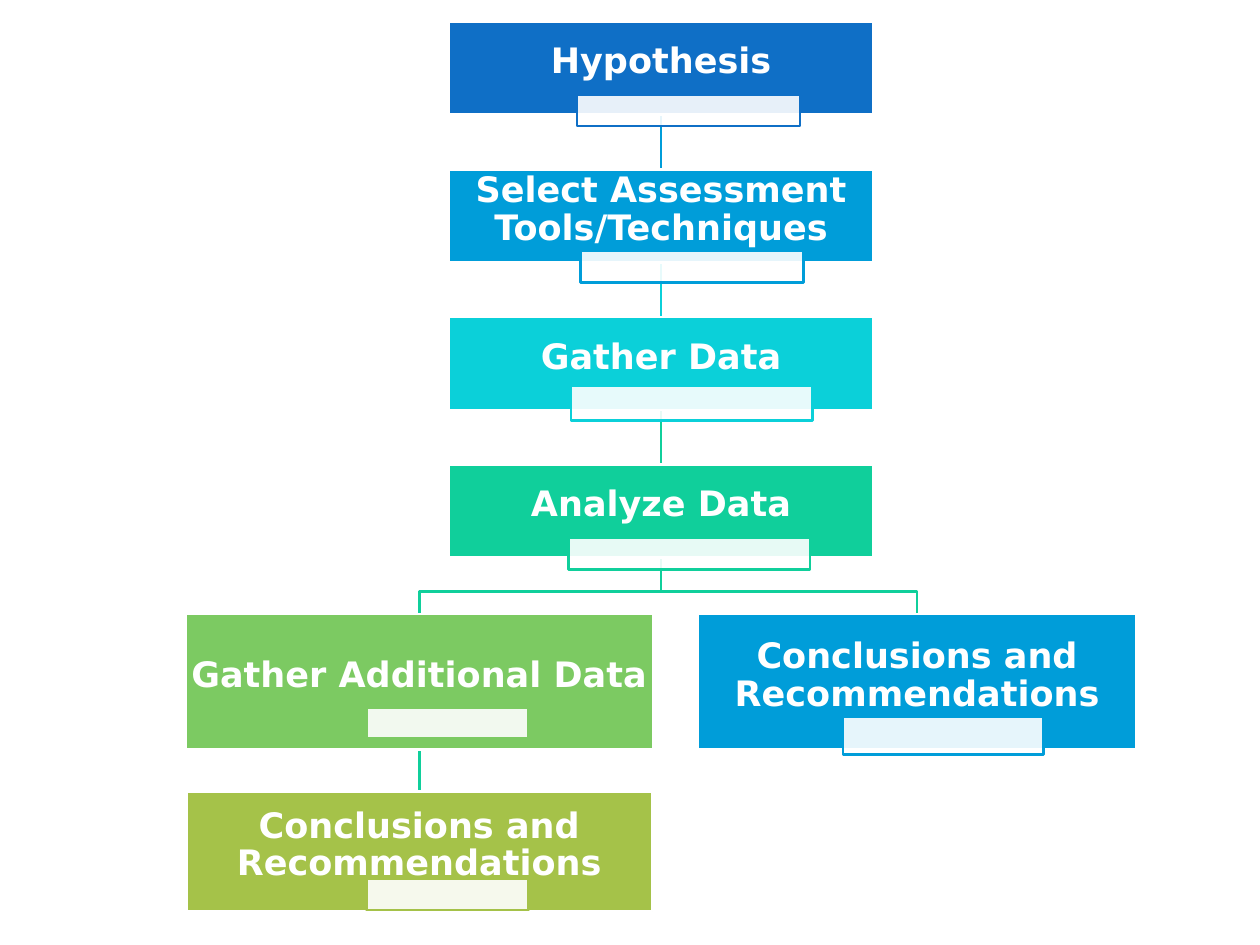
from dataclasses import dataclass

from lxml.etree import SubElement
from pptx import Presentation
from pptx.dml.color import RGBColor
from pptx.enum.shapes import MSO_CONNECTOR as Connector, MSO_SHAPE as Preset
from pptx.enum.text import MSO_ANCHOR as Anchor, PP_ALIGN as Align
from pptx.oxml.ns import qn
from pptx.util import Pt


@dataclass(frozen=True)
class Theme:
    white: str = "FFFFFF"
    blue: str = "0F6FC6"
    sky: str = "009DD9"
    cyan: str = "0BD0D9"
    teal: str = "10CF9B"
    green: str = "7CCA62"
    olive: str = "A5C249"
    font: str = "DejaVu Sans"
    size: float = 20
    stroke: float = 1.5
    tag_opacity: int = 90


@dataclass(frozen=True)
class Box:
    left: float
    top: float
    width: float
    height: float

    @property
    def middle(self):
        return self.left + self.width / 2

    @property
    def bottom(self):
        return self.top + self.height

    def inner(self, left, top, width, height):
        return Box(self.left + left, self.top + top, width, height)


@dataclass(frozen=True)
class Step:
    text: str
    color: str
    box: Box
    tag: tuple


THEME = Theme()
COLUMN_LEFT, COLUMN_TOP, COLUMN_PITCH = 256.4, 12.3, 84.4
COLUMN_WIDTH, COLUMN_HEIGHT = 242.8, 53.2
BRANCH_TOP, BRANCH_HEIGHT = 350.8, 77.6
FORK_DROP = 19.5

COLUMN = [
    ("Hypothesis", THEME.blue, (73.4, 41.8, 127.4, 18)),
    ("Select Assessment Tools/Techniques", THEME.sky, (75.4, 46.7, 127.4, 18)),
    ("Gather Data", THEME.cyan, (69.8, 39.4, 138.2, 20)),
    ("Analyze Data", THEME.teal, (68.3, 41.8, 138.2, 18)),
]
CONCLUSIONS = "Conclusions and Recommendations"
MORE_DATA = Step("Gather Additional Data", THEME.green,
                 Box(106, BRANCH_TOP, 267.2, BRANCH_HEIGHT), (103.6, 53.3, 92.6, 18))
LATE_RESULT = Step(CONCLUSIONS, THEME.olive,
                   Box(106.5, 452.3, 266.2, 68.4), (103, 49.8, 92.6, 18))
DIRECT_RESULT = Step(CONCLUSIONS, THEME.sky,
                     Box(398.8, BRANCH_TOP, 250.6, BRANCH_HEIGHT), (83, 58.7, 114.5, 21.6))


def rgb(color):
    return RGBColor.from_string(color)


def set_line(shape, color):
    shape.line.color.rgb = rgb(color)
    shape.line.width = Pt(THEME.stroke)


def add_rect(page, box, fill, line):
    shape = page.shapes.add_shape(
        Preset.RECTANGLE, Pt(box.left), Pt(box.top), Pt(box.width), Pt(box.height))
    shape.shadow.inherit = False
    shape.fill.solid()
    shape.fill.fore_color.rgb = rgb(fill)
    set_line(shape, line)
    return shape


def write(shape, text, *, size, color, font, bold=False):
    frame = shape.text_frame
    frame.word_wrap = True
    frame.vertical_anchor = Anchor.MIDDLE
    frame.margin_left = frame.margin_right = frame.margin_top = Pt(0.9)
    frame.margin_bottom = Pt(7.5)
    para = frame.paragraphs[0]
    para.alignment = Align.CENTER
    para.line_spacing = 0.9
    span = para.add_run()
    span.text = text
    span.font.name = font
    span.font.size = Pt(size)
    span.font.bold = bold
    span.font.color.rgb = rgb(color)


def add_tag(page, box, color):
    shape = add_rect(page, box, THEME.white, color)
    paint = shape.element.spPr.find(qn("a:solidFill")).find(qn("a:srgbClr"))
    SubElement(paint, qn("a:alpha"), val=str(THEME.tag_opacity * 1000))


def add_step(page, step):
    shape = add_rect(page, step.box, step.color, THEME.white)
    write(shape, step.text, size=THEME.size, color=THEME.white, font=THEME.font, bold=True)
    add_tag(page, step.box.inner(*step.tag), step.color)


def add_link(page, upper, lower, color):
    link = page.shapes.add_connector(
        Connector.STRAIGHT, Pt(upper.middle), Pt(upper.bottom), Pt(upper.middle), Pt(lower.top))
    set_line(link, color)
    SubElement(link.element.spPr, qn("a:effectLst"))


def add_fork(page, upper, lower, color):
    bend = upper.bottom + FORK_DROP
    points = [(upper.middle, bend), (lower.middle, bend), (lower.middle, lower.top)]
    builder = page.shapes.build_freeform(Pt(upper.middle), Pt(upper.bottom))
    builder.add_line_segments([(Pt(x), Pt(y)) for x, y in points], close=False)
    fork = builder.convert_to_shape()
    fork.shadow.inherit = False
    fork.fill.background()
    set_line(fork, color)


def add_flowchart(page):
    column = [
        Step(text, color,
             Box(COLUMN_LEFT, COLUMN_TOP + row * COLUMN_PITCH, COLUMN_WIDTH, COLUMN_HEIGHT), tag)
        for row, (text, color, tag) in enumerate(COLUMN)
    ]
    for branch in (DIRECT_RESULT, MORE_DATA):
        add_fork(page, column[-1].box, branch.box, THEME.teal)
    add_link(page, MORE_DATA.box, LATE_RESULT.box, THEME.teal)
    for upper, lower in zip(column, column[1:]):
        add_link(page, upper.box, lower.box, lower.color)
    for step in [*column, MORE_DATA, LATE_RESULT, DIRECT_RESULT]:
        add_step(page, step)


def main():
    deck = Presentation()
    deck.slide_width, deck.slide_height = Pt(720), Pt(540)
    page = deck.slides.add_slide(deck.slide_layouts[6])
    add_flowchart(page)
    deck.save("out.pptx")


if __name__ == "__main__":
    main()
